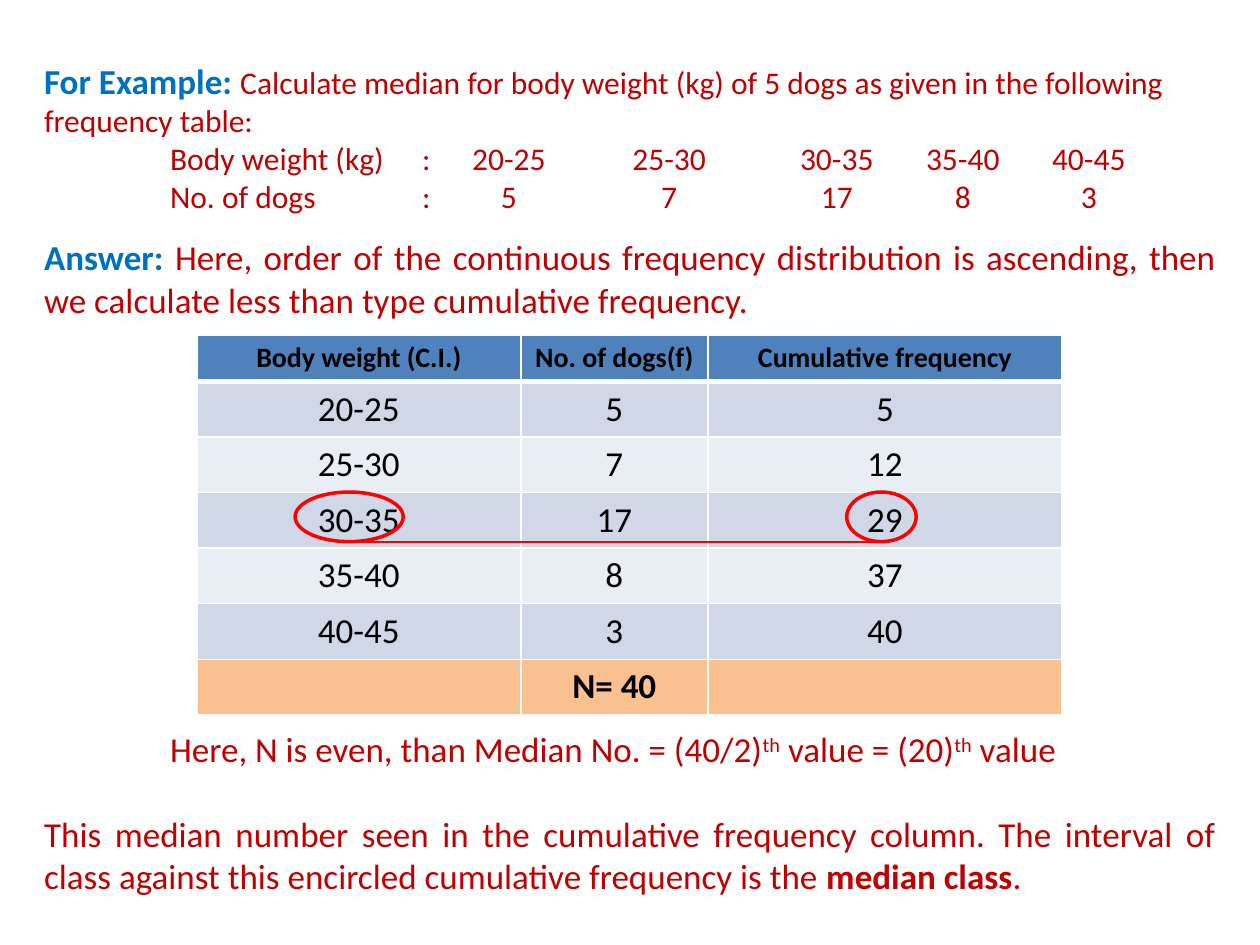
from typing import NamedTuple

from lxml.etree import SubElement
from pptx import Presentation
from pptx.dml.color import RGBColor
from pptx.enum.shapes import MSO_CONNECTOR as CONN, MSO_SHAPE as SHAPE
from pptx.enum.text import MSO_ANCHOR as ANCHOR, PP_ALIGN as ALIGN
from pptx.oxml.ns import qn
from pptx.util import Cm, Pt

BLUE = RGBColor(0x00, 0x70, 0xC0)
MAROON = RGBColor(0xC0, 0x00, 0x00)
RED = RGBColor(0xFF, 0x00, 0x00)
BLACK = RGBColor(0x00, 0x00, 0x00)
WHITE = RGBColor(0xFF, 0xFF, 0xFF)
HEADER = RGBColor(0x4F, 0x81, 0xBD)
BAND_DARK = RGBColor(0xD0, 0xD8, 0xE8)
BAND_LIGHT = RGBColor(0xE9, 0xED, 0xF4)
TOTAL = RGBColor(0xFA, 0xC0, 0x90)


class Tab(NamedTuple):
    pos: float
    align: str = "l"


class Row(NamedTuple):
    cells: tuple
    fill: RGBColor
    size: int = 20
    bold: bool = False
    height: float = 1.12


class Ring(NamedTuple):
    left: float
    width: float
    top: float = 9.92
    height: float = 1.0

    @property
    def foot(self):
        return Cm(self.left + self.width / 2), Cm(self.top + self.height)


INDENT = Tab(2.54)
DATA_TABS = (INDENT, Tab(7.62)) + tuple(
    Tab(pos, "ctr") for pos in (9.37, 12.6, 15.98, 18.52, 21.06))
DOGS = {"20-25": 5, "25-30": 7, "30-35": 17, "35-40": 8, "40-45": 3}
COL_WIDTHS = (6.53, 3.77, 7.14)
RINGS = (Ring(5.95, 2.18), Ring(17.07, 1.4))


def add_run(p, text: str, *, size=20, color=MAROON, bold=False, superscript=False):
    r = p.add_run()
    r.text = text
    r.font.name = "Calibri"
    r.font.size = Pt(size)
    r.font.bold = bold
    r.font.color.rgb = color
    if superscript:
        r.font._element.set("baseline", "30000")


def add_para(tf, *, align=ALIGN.JUSTIFY, before=0.0, tabs=()):
    p = tf.paragraphs[0] if not tf.paragraphs[0].runs else tf.add_paragraph()
    p.alignment = align
    p.space_before = Pt(before)
    if tabs:
        tab_list = SubElement(p._p.get_or_add_pPr(), qn("a:tabLst"))
        for tab in tabs:
            SubElement(tab_list, qn("a:tab"), pos=str(Cm(tab.pos)), algn=tab.align)
    return p


def add_text(s) -> None:
    tf = s.shapes.add_textbox(Cm(0.64), Cm(1.07), Cm(24.13), Cm(17.6)).text_frame
    tf.word_wrap = True

    p = add_para(tf, align=ALIGN.LEFT)
    add_run(p, "For Example: ", color=BLUE, bold=True)
    add_run(p, "Calculate median for body weight (kg) of 5 dogs as given in "
               "the following frequency table:", size=18)
    for label, values in (("Body weight (kg)", DOGS), ("No. of dogs", DOGS.values())):
        p = add_para(tf, align=ALIGN.LEFT, tabs=DATA_TABS)
        add_run(p, "\t" + "\t".join([label, ":", *map(str, values)]), size=18)

    p = add_para(tf, before=12.2)
    add_run(p, "Answer: ", color=BLUE, bold=True)
    add_run(p, "Here, order of the continuous frequency distribution is ascending, "
               "then we calculate less than type cumulative frequency.")

    p = add_para(tf, before=233, tabs=(INDENT,))
    add_run(p, "\tHere, N is even, than Median No. = (40/2)")
    add_run(p, "th", superscript=True)
    add_run(p, " value = (20)")
    add_run(p, "th", superscript=True)
    add_run(p, " value")

    p = add_para(tf, before=24.4)
    add_run(p, "This median number seen in the cumulative frequency column. The "
               "interval of class against this encircled cumulative frequency is the ")
    add_run(p, "median class", bold=True)
    add_run(p, ".")


def set_borders(cell, *, top: float, bottom: float) -> None:
    tc_pr = cell._tc.get_or_add_tcPr()
    for side, width in (("L", 1), ("R", 1), ("T", top), ("B", bottom)):
        ln = SubElement(tc_pr, qn(f"a:ln{side}"), w=str(Pt(width)))
        fill = SubElement(ln, qn("a:solidFill"))
        SubElement(fill, qn("a:srgbClr"), val=str(WHITE))


def frequency_rows() -> list[Row]:
    rows = [Row(("Body weight (C.I.)", "No. of dogs(f)", "Cumulative frequency"),
                HEADER, size=16, bold=True, height=0.94)]
    total = 0
    for i, (interval, count) in enumerate(DOGS.items()):
        total += count
        rows.append(Row((interval, str(count), str(total)),
                        BAND_LIGHT if i % 2 else BAND_DARK))
    rows.append(Row(("", f"N= {total}", ""), TOTAL, bold=True))
    return rows


def add_frequency_table(s, rows: list[Row]) -> None:
    table = s.shapes.add_table(
        len(rows), len(COL_WIDTHS), Cm(3.97), Cm(6.75),
        Cm(sum(COL_WIDTHS)), Cm(sum(row.height for row in rows))).table
    for col, width in zip(table.columns, COL_WIDTHS):
        col.width = Cm(width)
    for i, row in enumerate(rows):
        table.rows[i].height = Cm(row.height)
        for cell, text in zip(table.rows[i].cells, row.cells):
            set_borders(cell, top=3 if i == 1 else 1, bottom=3 if i == 0 else 1)
            cell.fill.solid()
            cell.fill.fore_color.rgb = row.fill
            cell.vertical_anchor = ANCHOR.TOP
            if text:
                p = add_para(cell.text_frame, align=ALIGN.CENTER)
                add_run(p, text, size=row.size, color=BLACK, bold=row.bold)


def style_line(sp, width: float) -> None:
    sp.line.color.rgb = RED
    sp.line.width = Pt(width)


def add_ring(s, ring: Ring) -> None:
    sp = s.shapes.add_shape(SHAPE.OVAL, Cm(ring.left), Cm(ring.top),
                            Cm(ring.width), Cm(ring.height))
    sp.shadow.inherit = False
    sp.fill.background()
    style_line(sp, 2)


def add_link(s, start: Ring, end: Ring) -> None:
    sp = s.shapes.add_connector(CONN.STRAIGHT, *start.foot, *end.foot)
    style_line(sp, 1)
    SubElement(sp._element.spPr, qn("a:effectLst"))


def main() -> None:
    prs = Presentation()
    prs.slide_width, prs.slide_height = Cm(25.4), Cm(19.05)
    s = prs.slides.add_slide(prs.slide_layouts[6])
    add_text(s)
    add_frequency_table(s, frequency_rows())
    for ring in RINGS:
        add_ring(s, ring)
    add_link(s, *RINGS)
    prs.save("out.pptx")


if __name__ == "__main__":
    main()
